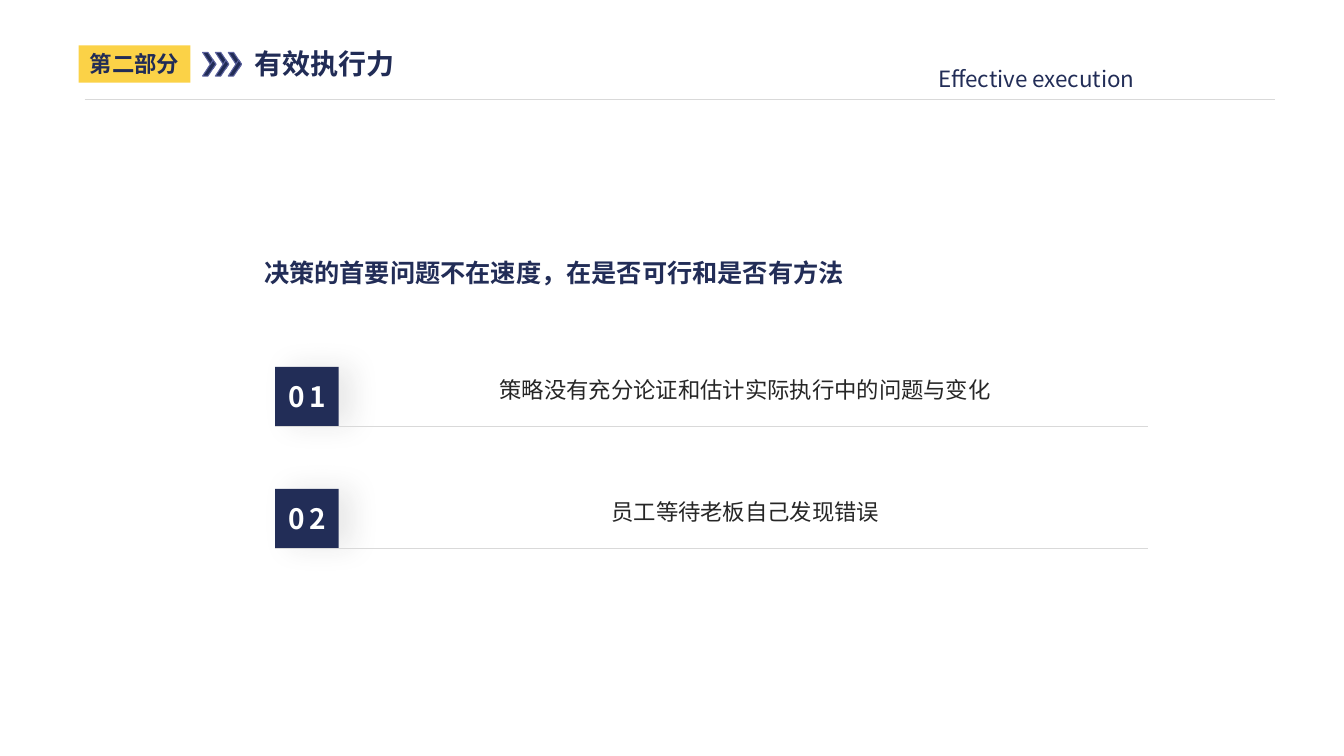
from lxml import etree
from pptx import Presentation
from pptx.dml.color import RGBColor
from pptx.enum.shapes import MSO_CONNECTOR, MSO_SHAPE
from pptx.enum.text import MSO_ANCHOR, PP_ALIGN
from pptx.oxml.ns import qn
from pptx.util import Inches, Pt

RECTANGLE = MSO_SHAPE.RECTANGLE
STRAIGHT = MSO_CONNECTOR.STRAIGHT
TOP, MIDDLE = MSO_ANCHOR.TOP, MSO_ANCHOR.MIDDLE
CENTER, JUSTIFY = PP_ALIGN.CENTER, PP_ALIGN.JUSTIFY

COLORS = {
    "navy": "222D57",
    "header": "212C56",
    "edge": "5C629E",
    "yellow": "FBD247",
    "rule": "D9D9D9",
    "ink": "262626",
    "white": "FFFFFF",
}
FONT = "Noto Sans CJK SC"
COLUMNS, ROWS = 133.33, 75
CELL = Inches(0.1)


def cells(count):
    return round(count * CELL)


def color(name):
    return RGBColor.from_string(COLORS[name])


def write_text(shape, text, size=16, ink="navy", bold=False, align=CENTER,
               anchor=TOP, wrap=True, level=0, line_spacing=None, tracking=None):
    pieces = [(text, size)] if isinstance(text, str) else text
    frame = shape.text_frame
    frame.word_wrap = wrap
    frame.vertical_anchor = anchor
    paragraph = frame.paragraphs[0]
    paragraph.alignment = align
    paragraph.level = level
    paragraph.line_spacing = line_spacing
    for content, points in pieces:
        run = paragraph.add_run()
        run.text = content
        run.font.size = Pt(points)
        run.font.bold = bold
        run.font.name = FONT
        run.font.color.rgb = color(ink)
        properties = run.font._element
        east_asian = etree.Element(qn("a:ea"), typeface=FONT)
        properties.find(qn("a:latin")).addnext(east_asian)
        if tracking is not None:
            properties.set("spc", str(round(tracking * 100)))


class SlideBuilder:
    def __init__(self, presentation):
        self.slide = presentation.slides.add_slide(presentation.slide_layouts[5])
        self.shapes = self.slide.shapes

    def title(self, text, left, top, width, height, **style):
        shape = self.shapes.title
        shape.left, shape.top = cells(left), cells(top)
        shape.width, shape.height = cells(width), cells(height)
        write_text(shape, text, **style)

    def label(self, text, left, top, width, height, **style):
        shape = self.shapes.add_textbox(*map(cells, (left, top, width, height)))
        write_text(shape, text, **style)

    def box(self, text, left, top, width, height, fill, shadow=False, **style):
        shape = self.shapes.add_shape(
            RECTANGLE, *map(cells, (left, top, width, height)))
        self.paint(shape, fill)
        if shadow:
            self.cast_shadow(shape)
        write_text(shape, text, **style)

    def paint(self, shape, fill, edge=None):
        shape.shadow.inherit = False
        shape.fill.solid()
        shape.fill.fore_color.rgb = color(fill)
        if edge:
            shape.line.color.rgb = color(edge)
            shape.line.width = Pt(0.75)
        else:
            shape.line.fill.background()

    def cast_shadow(self, shape):
        effects = shape._element.spPr.find(qn("a:effectLst"))
        outer = etree.SubElement(
            effects, qn("a:outerShdw"), blurRad=str(Pt(20)), dist=str(Pt(10)),
            dir="0", algn="l", rotWithShape="0")
        tint = etree.SubElement(outer, qn("a:srgbClr"), val=COLORS["ink"])
        etree.SubElement(tint, qn("a:alpha"), val="10000")

    def rule(self, left, right, top, weight):
        line = self.shapes.add_connector(
            STRAIGHT, *map(cells, (left, top, right, top)))
        line.line.color.rgb = color("rule")
        line.line.width = Pt(weight)
        etree.SubElement(line._element.spPr, qn("a:effectLst"))

    def chevron(self, left, top, height):
        outline = [(0, 0), (1.05, 1.6), (1.32, 1.18), (0.53, 0)]
        for start, direction in ((top, 1), (top + height, -1)):
            points = [(cells(left + x), cells(start + direction * y))
                      for x, y in outline]
            builder = self.shapes.build_freeform(*points[0])
            builder.add_line_segments(points[1:], close=True)
            self.paint(builder.convert_to_shape(), "header", "edge")

    def numbered_row(self, number, text, top):
        self.box(text, 37.9, top + 0.4, 72.1, 3.7, "white", ink="ink")
        self.box([("0", 20), (" ", 1), (f" {number}", 20)],
                 27.3, top, 6.3, 5.85, "navy", shadow=True,
                 ink="white", bold=True, anchor=MIDDLE, tracking=-1.5)
        self.rule(27.3, 113.9, top + 5.85, 0.25)


def main():
    presentation = Presentation()
    presentation.slide_width = cells(COLUMNS)
    presentation.slide_height = cells(ROWS)
    page = SlideBuilder(presentation)

    page.title("有效执行力", 24.2, 4.1, 17.8, 4.4,
               size=20, ink="header", bold=True, align=JUSTIFY)
    page.box("第二部分", 7.8, 4.5, 11.1, 3.7, "yellow", ink="header", bold=True)
    for index in range(3):
        page.chevron(20.1 + 1.27 * index, 5.2, 2.35)
    page.label("Effective execution", 87.1, 6, 37.6, 3.7, align=JUSTIFY, level=1)
    page.rule(8.4, 126.5, 9.9, 0.5)

    page.label("决策的首要问题不在速度，在是否可行和是否有方法", 24.9, 24.1, 60.1, 4.6,
               size=18, bold=True, wrap=False, line_spacing=1.3)
    statements = ["策略没有充分论证和估计实际执行中的问题与变化", "员工等待老板自己发现错误"]
    for index, statement in enumerate(statements):
        page.numbered_row(index + 1, statement, 36.4 + 12.1 * index)

    presentation.save("out.pptx")


if __name__ == "__main__":
    main()
